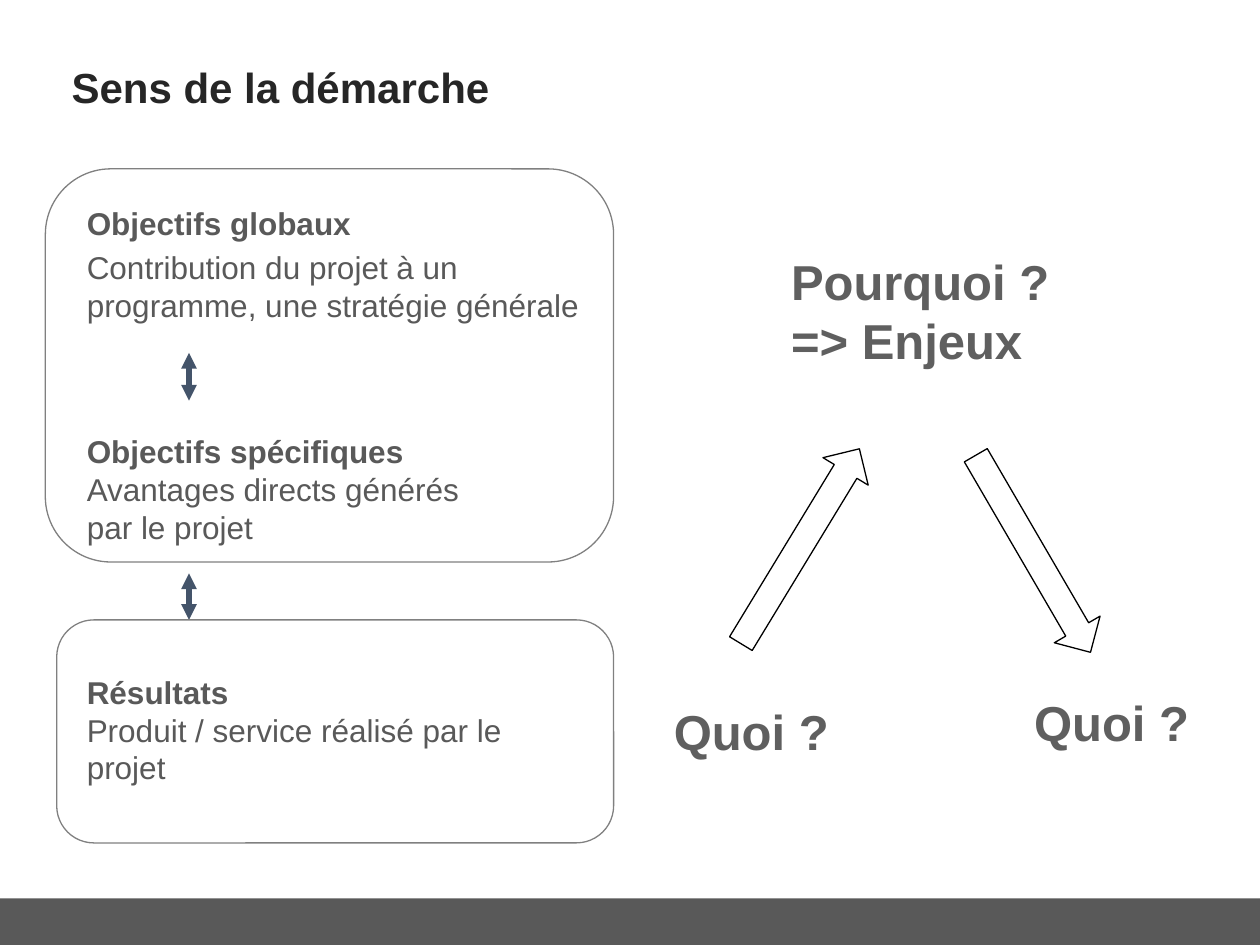
from lxml import etree
from pptx import Presentation
from pptx import util as u
from pptx.dml.color import RGBColor
from pptx.enum import shapes, text
from pptx.oxml.ns import qn


def color(value):
    return RGBColor.from_string(value)


class SlideBuilder:
    font = "Arial"
    body = {"size": u.Pt(18), "color": "595959"}
    question = {"size": u.Pt(28), "color": "5F5F5F"}
    heading = {"size": u.Pt(24), "color": "262626"}

    def __init__(self, slide):
        self.slide = slide

    def text_box(self, box, lines, style, space_before=0, anchor=text.MSO_ANCHOR.TOP):
        """Add one paragraph per (wording, bold) pair; space goes between paragraphs."""
        frame = self.slide.shapes.add_textbox(*map(u.Inches, box)).text_frame
        frame.word_wrap = True
        frame.vertical_anchor = anchor
        for index, (wording, bold) in enumerate(lines):
            paragraph = frame.add_paragraph() if index else frame.paragraphs[0]
            run = paragraph.add_run()
            run.text = wording
            if index and space_before:
                paragraph.space_before = u.Pt(space_before)
            for name, value in {"name": self.font, "size": style["size"], "bold": bold}.items():
                setattr(run.font, name, value)
            run.font.color.rgb = color(style["color"])

    def shape(self, kind, box, fill=None, line=None, rotation=0):
        shape = self.slide.shapes.add_shape(kind, *map(u.Inches, box))
        shape.shadow.inherit = False
        shape.rotation = rotation
        if fill:
            shape.fill.solid()
            shape.fill.fore_color.rgb = color(fill)
        else:
            shape.fill.background()
        if line:
            shape.line.color.rgb = color(line)
            shape.line.width = u.Pt(0.75)
        else:
            shape.line.fill.background()

    def double_arrow(self, x, top, bottom):
        connector = self.slide.shapes.add_connector(
            shapes.MSO_CONNECTOR.STRAIGHT, *map(u.Inches, (x, top, x, bottom)))
        connector.line.color.rgb = color("44546A")
        connector.line.width = u.Pt(3)
        properties = connector.line._get_or_add_ln()
        for end in ("a:headEnd", "a:tailEnd"):
            etree.SubElement(properties, qn(end), type="triangle")
        etree.SubElement(connector._element.spPr, qn("a:effectLst"))


def main():
    presentation = Presentation()
    presentation.slide_width = u.Inches(10)
    presentation.slide_height = u.Inches(7.5)
    builder = SlideBuilder(presentation.slides.add_slide(presentation.slide_layouts[6]))
    preset = shapes.MSO_SHAPE

    builder.shape(preset.RECTANGLE, (0, 7.13, 10, 0.37), fill="595959")
    builder.text_box((0.47, 0.41, 8.47, 0.56), [("Sens de la démarche", True)],
                     builder.heading, anchor=text.MSO_ANCHOR.MIDDLE)

    levels = [
        ((0.59, 3.38, 3.49, 1.01), "Objectifs spécifiques",
         "Avantages directs générés par le projet", 0),
        ((0.59, 1.57, 4.22, 1.37), "Objectifs globaux",
         "Contribution du projet à un programme, une stratégie générale", 3.6),
        ((0.59, 5.29, 3.49, 1.01), "Résultats",
         "Produit / service réalisé par le projet", 0),
    ]
    for box, title, description, gap in levels:
        builder.text_box(box, [(title, True), (description, False)], builder.body, gap)

    for top, bottom in ((2.8, 3.18), (4.55, 4.92)):
        builder.double_arrow(1.5, top, bottom)

    for frame in ((0.36, 1.34, 4.51, 3.12), (0.45, 4.92, 4.42, 1.77)):
        builder.shape(preset.ROUNDED_RECTANGLE, frame, line="808080")

    questions = [
        ((6.18, 1.95, 2.58, 1.04), ["Pourquoi ?", "=> Enjeux"]),
        ((5.25, 5.52, 1.63, 0.57), ["Quoi ?"]),
        ((8.11, 5.45, 1.63, 0.57), ["Quoi ?"]),
    ]
    for box, lines in questions:
        builder.text_box(box, [(line, True) for line in lines], builder.question)

    for left, top, rotation in ((6.14, 3.43, 211.3), (7.99, 3.49, 329.8)):
        builder.shape(preset.DOWN_ARROW, (left, top, 0.42, 1.81),
                      fill="FFFFFF", line="000000", rotation=rotation)

    presentation.save("out.pptx")


if __name__ == "__main__":
    main()
